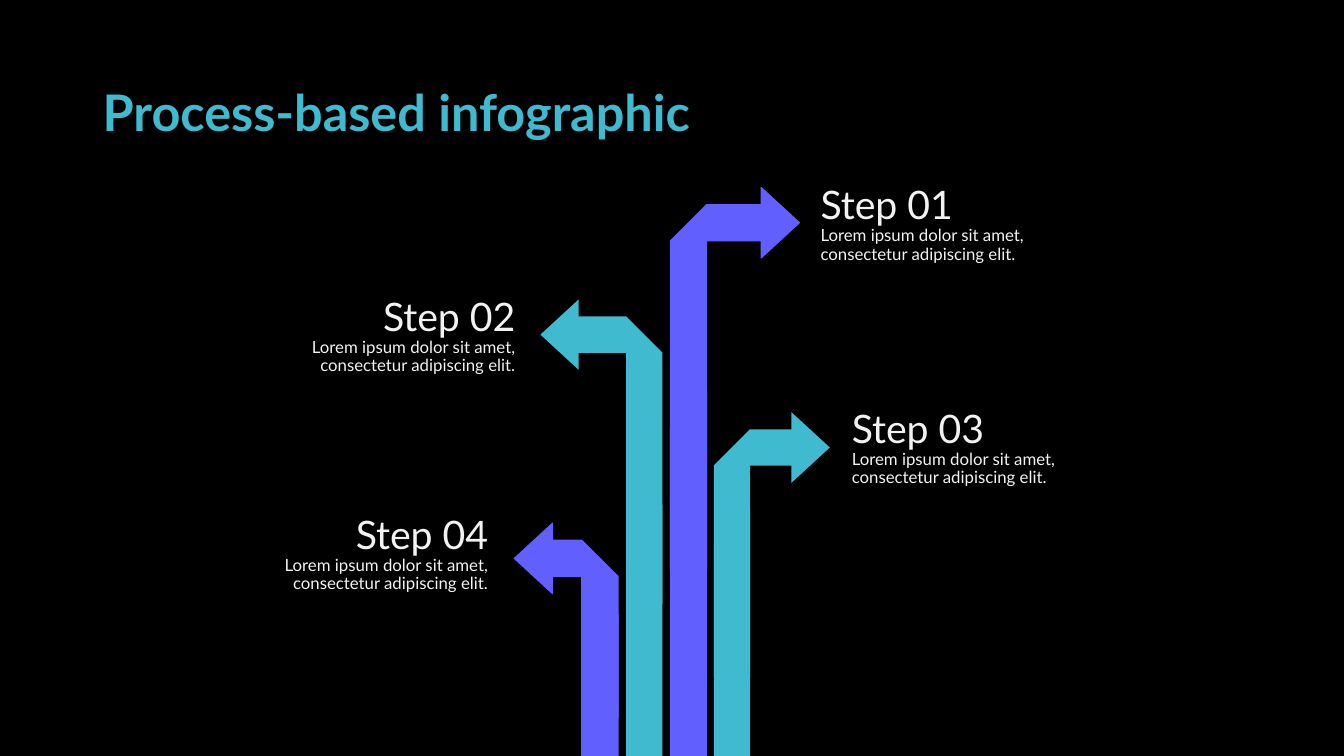
from dataclasses import dataclass

from pptx import Presentation
from pptx.dml.color import RGBColor
from pptx.enum.text import MSO_ANCHOR, MSO_AUTO_SIZE, PP_ALIGN
from pptx.slide import Slide
from pptx.text.text import TextFrame
from pptx.util import Inches, Pt

BLACK = RGBColor(0x00, 0x00, 0x00)
PURPLE = RGBColor(0x61, 0x5F, 0xFD)
TEAL = RGBColor(0x3F, 0xBA, 0xCF)
OFF_WHITE = RGBColor(0xF2, 0xF2, 0xF2)

LEFT, RIGHT = PP_ALIGN.LEFT, PP_ALIGN.RIGHT
MIDDLE = MSO_ANCHOR.MIDDLE
FIT_SHAPE = MSO_AUTO_SIZE.SHAPE_TO_FIT_TEXT

FONT = "Lato"
DESCRIPTION = "Lorem ipsum dolor sit amet, consectetur adipiscing elit."

SLIDE_WIDTH, SLIDE_HEIGHT = 13.33, 7.5
BAND = 0.36  # thickness of every arrow
HEAD_LENGTH = 0.38
HEAD_HALF_HEIGHT = 0.35
ARM_TO_TIP = 0.35  # the arm ends slightly inside the head
LABEL_WIDTH, LABEL_HEIGHT = 2.73, 0.94

Point = tuple[float, float]


@dataclass(frozen=True)
class Step:
    title: str
    color: RGBColor
    outlined: bool
    direction: int  # 1 points right, -1 points left
    outer_x: float  # stem edge facing away from the head
    top: float
    stem_length: float
    tip_x: float
    label_left: float
    label_top: float


STEPS = (
    Step("Step 01", PURPLE, True, 1, 6.65, 2.03, 3.62, 7.93, 8.04, 1.74),
    Step("Step 03", TEAL, False, 1, 7.08, 4.26, 2.46, 8.23, 8.35, 3.96),
    Step("Step 02", TEAL, False, -1, 6.57, 3.14, 2.85, 5.36, 2.48, 2.85),
    Step("Step 04", PURPLE, True, -1, 6.13, 5.36, 1.76, 5.1, 2.21, 5.01),
)


def add_polygon(slide: Slide, points: list[Point], step: Step) -> None:
    corners = [(Inches(x), Inches(y)) for x, y in points]
    builder = slide.shapes.build_freeform(*corners[0])
    builder.add_line_segments(corners[1:], close=True)
    shape = builder.convert_to_shape()
    shape.shadow.inherit = False
    shape.fill.solid()
    shape.fill.fore_color.rgb = step.color
    if step.outlined:
        shape.line.color.rgb = step.color
        shape.line.width = Pt(0.75)
    else:
        shape.line.fill.background()


def add_arrow(slide: Slide, step: Step) -> None:
    """Draw two overlapping stem pieces, the bent arm and the head."""
    outer_x = step.outer_x
    inner_x = outer_x + step.direction * BAND
    for top in (step.top, SLIDE_HEIGHT - step.stem_length):
        bottom = top + step.stem_length
        stem = [(inner_x, top), (inner_x, bottom), (outer_x, bottom), (outer_x, top + BAND)]
        add_polygon(slide, stem, step)

    arm_x = step.tip_x - step.direction * ARM_TO_TIP
    arm_bottom = step.top + BAND
    arm = [(arm_x, arm_bottom), (outer_x, arm_bottom), (inner_x, step.top), (arm_x, step.top)]
    add_polygon(slide, arm, step)

    base_x = step.tip_x - step.direction * HEAD_LENGTH
    middle = step.top + BAND / 2
    head = [
        (step.tip_x, middle),
        (base_x, middle - HEAD_HALF_HEIGHT),
        (base_x, middle + HEAD_HALF_HEIGHT),
    ]
    add_polygon(slide, head, step)


def add_text_frame(slide: Slide, left: float, top: float, width: float, height: float) -> TextFrame:
    box = slide.shapes.add_textbox(Inches(left), Inches(top), Inches(width), Inches(height))
    box.text_frame.word_wrap = True
    return box.text_frame


def write_line(
    frame: TextFrame,
    text: str,
    size: int,
    color: RGBColor,
    alignment: PP_ALIGN = LEFT,
    spacing: float = 1.0,
    bold: bool = False,
) -> None:
    """Fill the empty first paragraph, or add one below the existing text."""
    first = frame.paragraphs[0]
    paragraph = frame.add_paragraph() if first.runs else first
    paragraph.alignment = alignment
    paragraph.line_spacing = spacing
    run = paragraph.add_run()
    run.text = text
    run.font.name = FONT
    run.font.size = Pt(size)
    run.font.bold = bold
    run.font.color.rgb = color


def add_label(slide: Slide, step: Step) -> None:
    frame = add_text_frame(slide, step.label_left, step.label_top, LABEL_WIDTH, LABEL_HEIGHT)
    frame.auto_size = FIT_SHAPE
    alignment = LEFT if step.direction > 0 else RIGHT
    write_line(frame, step.title, 28, OFF_WHITE, alignment)
    write_line(frame, DESCRIPTION, 12, OFF_WHITE, alignment, spacing=0.9)


def main() -> None:
    presentation = Presentation()
    presentation.slide_width = Inches(SLIDE_WIDTH)
    presentation.slide_height = Inches(SLIDE_HEIGHT)
    slide = presentation.slides.add_slide(presentation.slide_layouts[6])
    slide.background.fill.solid()
    slide.background.fill.fore_color.rgb = BLACK

    for step in STEPS:
        add_arrow(slide, step)
        add_label(slide, step)

    title = add_text_frame(slide, 0.92, 0.8, 11.5, 0.68)
    title.vertical_anchor = MIDDLE
    write_line(title, "Process-based infographic", 36, TEAL, spacing=0.9, bold=True)

    presentation.save("out.pptx")


if __name__ == "__main__":
    main()
